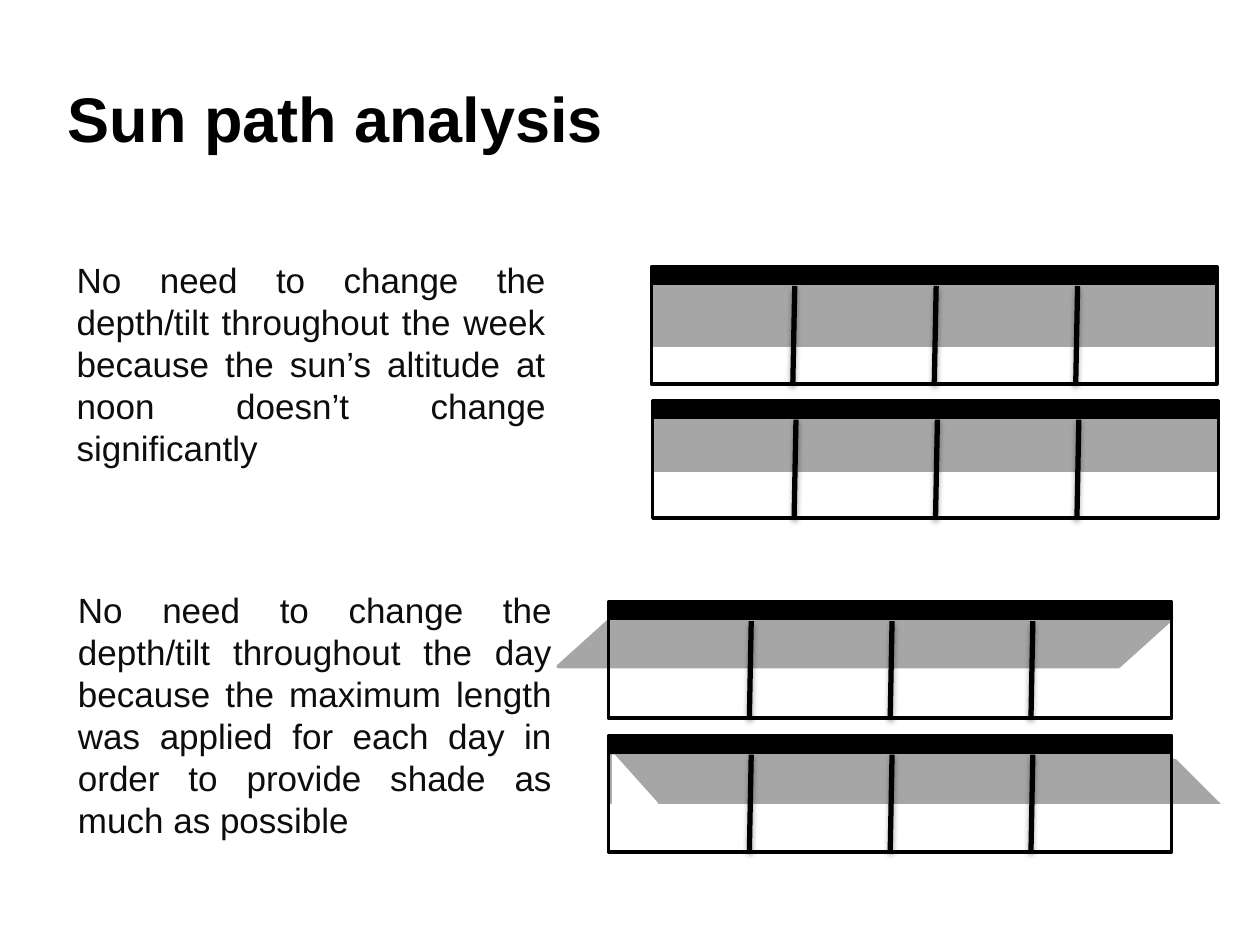
from lxml.etree import SubElement
from pptx import Presentation
from pptx.dml.color import RGBColor
from pptx.enum.shapes import MSO_CONNECTOR as Conn, MSO_SHAPE as Kind
from pptx.enum.text import PP_ALIGN as Align
from pptx.oxml.ns import qn
from pptx.util import Inches, Pt

BLACK = RGBColor(0, 0, 0)
INK = RGBColor(0x0D, 0x0D, 0x0D)
GREY = RGBColor(0xA6, 0xA6, 0xA6)
WHITE = RGBColor(0xFF, 0xFF, 0xFF)

HEAD = {"size": Pt(36), "bold": True, "color": BLACK}
BODY = {"size": Pt(20), "bold": False, "color": INK}

# words, place, top inset, font, paragraph format
TEXTS = [
    ("Sun path analysis", (0.44, 0.52, 8.82, 0.94), 0.11, HEAD, {}),
    ("No need to change the depth/tilt throughout the week because "
     "the sun’s altitude at noon doesn’t change significantly",
     (0.51, 2, 3.92, 1.73), 0.05, BODY,
     {"alignment": Align.JUSTIFY, "line_spacing": Pt(24)}),
    ("No need to change the depth/tilt throughout the day because "
     "the maximum length was applied for each day in order to provide "
     "shade as much as possible",
     (0.52, 4.62, 3.96, 2.14), 0.05, BODY,
     {"alignment": Align.JUSTIFY, "line_spacing": Pt(24)}),
]

# Shades lie behind the frame, masks in front of it.
# Each: kind, colour, place from the frame's top left corner, turn
BAYS, BAR, RISE, LEAN = 4, 0.13, 0.02, 0.015
PANELS = [
    {"at": (5.17, 2.25, 4.49, 0.8), "masks": [],
     "shades": [(Kind.RECTANGLE, GREY, (0.02, 0.02, 4.46, 0.47), 0)]},
    {"at": (5.18, 3.31, 4.49, 0.8), "masks": [],
     "shades": [(Kind.RECTANGLE, GREY, (0.02, 0.02, 4.47, 0.4), 0)]},
    {"at": (4.83, 4.91, 4.47, 0.79), "masks": [],
     "shades": [(Kind.PARALLELOGRAM, GREY, (-0.4, 0, 4.87, 0.38), 0)]},
    {"at": (4.83, 5.97, 4.47, 0.79),
     "shades": [(Kind.RECTANGLE, GREY, (0, 0, 4.87, 0.4), 0),
                (Kind.ISOSCELES_TRIANGLE, WHITE, (4.47, 0, 0.4, 0.4), 270)],
     "masks": [(Kind.RIGHT_TRIANGLE, WHITE, (0.04, 0.03, 0.34, 0.38), 0),
               (Kind.RECTANGLE, WHITE, (4.49, -0.06, 0.5, 0.1), 0)]},
]
SLANT = {Kind.PARALLELOGRAM: 1.11, Kind.ISOSCELES_TRIANGLE: 1}


def write(slide, words, at, inset, face, form):
    frame = slide.shapes.add_textbox(*map(Inches, at)).text_frame
    frame.word_wrap = True
    frame.margin_top = Inches(inset)
    para = frame.paragraphs[0]
    for key, value in form.items():
        setattr(para, key, value)
    run = para.add_run()
    run.text = words
    run.font.name = "Arial"
    run.font.size, run.font.bold = face["size"], face["bold"]
    run.font.color.rgb = face["color"]


def block(slide, kind, fill, line, at, turn=0):
    shape = slide.shapes.add_shape(kind, *map(Inches, at))
    shape.shadow.inherit = False
    shape.rotation = turn
    if kind in SLANT:
        shape.adjustments[0] = SLANT[kind]
    if fill is None:
        shape.fill.background()
    else:
        shape.fill.solid()
        shape.fill.fore_color.rgb = fill
    shape.line.color.rgb = line
    shape.line.width = Pt(2)


def post(slide, x, top, base):
    """Draw one leaning divider with a soft shadow below it."""
    ends = map(Inches, (x, base, x + LEAN, top))
    line = slide.shapes.add_connector(Conn.STRAIGHT, *ends)
    line.line.color.rgb = BLACK
    line.line.width = Pt(3)
    props = line._element.spPr
    shade = SubElement(SubElement(props, qn("a:effectLst")),
                       qn("a:outerShdw"), blurRad=str(Pt(3.1)),
                       dist=str(Pt(1.8)), dir="5400000", rotWithShape="0")
    tint = SubElement(shade, qn("a:srgbClr"), val=str(BLACK))
    SubElement(tint, qn("a:alpha"), val="35000")


def panel(slide, at, shades, masks):
    left, top, wide, high = at

    def place(parts):
        for kind, color, (x, y, w, h), turn in parts:
            block(slide, kind, color, color, (left + x, top + y, w, h), turn)

    place(shades)
    block(slide, Kind.RECTANGLE, None, BLACK, at)
    block(slide, Kind.RECTANGLE, BLACK, BLACK, (left, top - BAR, wide, BAR))
    for bay in range(1, BAYS):
        post(slide, left + bay * wide / BAYS, top + RISE, top + high)
    place(masks)


def main():
    deck = Presentation()
    deck.slide_width, deck.slide_height = Inches(10), Inches(7.5)
    slide = deck.slides.add_slide(deck.slide_layouts[6])
    for text in TEXTS:
        write(slide, *text)
    for item in PANELS:
        panel(slide, **item)
    deck.save("out.pptx")


if __name__ == "__main__":
    main()
